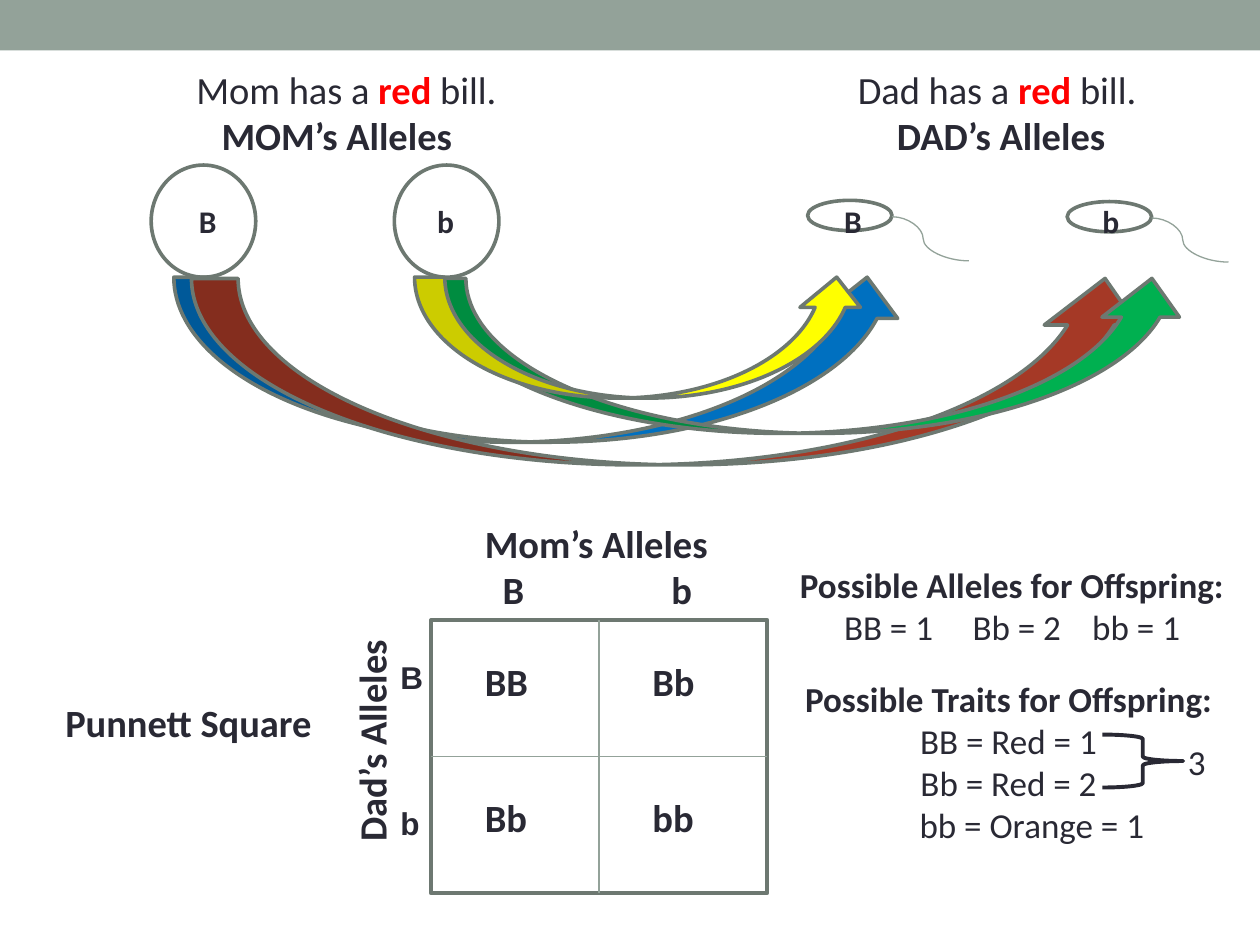
from pptx import Presentation, util as u
from pptx.dml.color import RGBColor
from pptx.enum import shapes, text
from pptx.oxml.ns import qn
from lxml import etree

INK = RGBColor(0x29, 0x29, 0x34)
RED = RGBColor(0xFF, 0x00, 0x00)
SAGE = RGBColor(0x93, 0xA2, 0x99)
OUTLINE = RGBColor(0x6D, 0x78, 0x71)
BLUE = RGBColor(0x00, 0x70, 0xC0)
RUST = RGBColor(0xA5, 0x39, 0x26)
GREEN = RGBColor(0x00, 0xB0, 0x50)
YELLOW = RGBColor(0xFF, 0xFF, 0x00)
KIND = shapes.MSO_SHAPE


def add_figure(parent, kind, place, fill=None, line=OUTLINE, weight=2.08):
    """Add a preset shape; without a fill it is see-through, without a line bare."""
    figure = parent.add_shape(kind, *map(u.Inches, place))
    figure.shadow.inherit = False
    if fill is None:
        figure.fill.background()
    else:
        figure.fill.solid()
        figure.fill.fore_color.rgb = fill
    if line is None:
        figure.line.fill.background()
    else:
        figure.line.color.rgb = line
        figure.line.width = u.Pt(weight)
    return figure


def add_line(parent, kind, start=(0, 0), end=(0, 0)):
    """Add a thin connector without a shadow."""
    line = parent.add_connector(kind, *map(u.Inches, (*start, *end)))
    line.line.color.rgb = SAGE
    line.line.width = u.Pt(0.75)
    etree.SubElement(line._element.spPr, qn("a:effectLst"))
    return line


def add_tail(parent, left, top):
    """Add the curved tail of a sperm cell."""
    tail = add_line(parent, shapes.MSO_CONNECTOR.CURVE, (left, top), (left + 0.61, top + 0.35))
    guides = tail._element.spPr.find(qn("a:prstGeom")).get_or_add_avLst()
    etree.SubElement(guides, qn("a:gd"), name="adj1", fmla="val 40500")


def set_tabs(para, stops):
    """Give a paragraph left tab stops, in inches from the text edge."""
    tabs = etree.SubElement(para._p.get_or_add_pPr(), qn("a:tabLst"))
    for stop in stops:
        etree.SubElement(tabs, qn("a:tab"), pos=str(u.Inches(stop)), algn="l")


def add_text(parent, place, lines, size=22, font="Calibri", bold=True,
             align=None, middle=False, rotation=0):
    """Add a text box from lines, each a string or a (spans, options) pair."""
    box = parent.add_textbox(*map(u.Inches, place))
    box.rotation = rotation
    frame = box.text_frame
    frame.word_wrap = True
    frame.vertical_anchor = text.MSO_ANCHOR.MIDDLE if middle else text.MSO_ANCHOR.TOP
    for index, line in enumerate(lines):
        spans, options = (line, {}) if isinstance(line, str) else line
        para = frame.paragraphs[0] if index == 0 else frame.add_paragraph()
        para.alignment = align
        if "indent" in options:
            para._p.get_or_add_pPr().set("marL", str(u.Inches(options["indent"])))
        if "tabs" in options:
            set_tabs(para, options["tabs"])
        for part in [spans] if isinstance(spans, str) else spans:
            words, color = (part, INK) if isinstance(part, str) else part
            span = para.add_run()
            span.text = words
            span.font.name = font
            span.font.size = u.Pt(size)
            span.font.bold = options.get("bold", bold) or color == RED
            span.font.color.rgb = color
    return box


def add_parents(parent):
    """Draw both parents' cells, their labels and the inheritance arrows."""
    for left in (1.2, 3.13):
        add_figure(parent, KIND.OVAL, (left, 1.31, 0.83, 0.89))
    for left, top in ((8.47, 1.6), (6.41, 1.59)):
        add_figure(parent, KIND.OVAL, (left, top, 0.67, 0.24))
        add_tail(parent, left + 0.67, top + 0.13)
    bills = ["\tMom has a ", ("red", RED), " bill.\tDad has a ", ("red", RED), " bill."]
    add_text(parent, (0.33, 0.47, 9.25, 0.84), [
        (bills, {"tabs": (1.13, 6.38), "bold": False}),
        ("\tMOM’s Alleles\tDAD’s Alleles", {"tabs": (1.33, 6.69)}),
    ], middle=True)
    add_text(parent, (1.2, 1.55, 7.98, 0.4),
             [("\tB\tb\tB\tb", {"tabs": (0.28, 2.17, 5.4, 7.45)})], size=18, middle=True)
    for place, fill in (
        ((1.38, 2.2, 5.83, 1.31), BLUE),
        ((1.52, 2.21, 7.62, 1.48), RUST),
        ((3.39, 2.21, 6.06, 1.23), GREEN),
        ((3.29, 2.2, 3.59, 0.96), YELLOW),
    ):
        add_figure(parent, KIND.CURVED_UP_ARROW, place, fill)


def add_punnett_square(parent):
    """Draw the two-by-two square with its headings and genotypes."""
    group = parent.add_group_shape().shapes
    square = add_figure(group, KIND.RECTANGLE, (3.42, 4.92, 2.67, 2.17))
    for first, last in ((0, 2), (1, 3)):
        line = add_line(group, shapes.MSO_CONNECTOR.STRAIGHT)
        line.begin_connect(square, first)
        line.end_connect(square, last)
    add_text(parent, (3.75, 4.08, 2.33, 0.84),
             ["Mom’s Alleles", ("\tB\tb", {"tabs": (0.14, 1.48)})])
    add_text(parent, (1.98, 5.57, 1.94, 0.47), ["Dad’s Alleles"], rotation=270)
    for label, top in (("B", 5.17), ("b", 6.33)):
        add_text(parent, (3.08, top, 0.46, 0.4), [label], size=18, font="Arial")
    for row, genotypes in enumerate((("BB", "Bb"), ("Bb", "bb"))):
        for column, genotype in enumerate(genotypes):
            place = (3.75 + 1.33 * column, 5.17 + 1.08 * row, 0.78, 0.47)
            add_text(parent, place, [genotype])
    add_text(parent, (0.42, 5.5, 2.17, 0.47), ["Punnett Square"])


def add_results(parent):
    """List the possible alleles and traits of the offspring."""
    add_text(parent, (6.25, 4.42, 3.75, 0.77), [
        "Possible Alleles for Offspring:",
        ("\tBB = 1\tBb = 2\tbb = 1", {"tabs": (0.35, 1.37, 2.32), "bold": False}),
    ], size=20)
    add_text(parent, (6.17, 5.33, 3.67, 1.75), [
        ("Possible Traits for Offspring:", {"bold": True}),
        "BB = Red = 1",
        "Bb = Red = 2",
        ("bb = Orange = 1", {"indent": 0.37}),
    ], size=20, bold=False, align=text.PP_ALIGN.CENTER)
    add_figure(parent, KIND.RIGHT_BRACE, (8.75, 5.83, 0.64, 0.42), line=INK, weight=2.25)
    add_text(parent, (9.33, 5.83, 0.33, 0.44), ["3"], size=20, bold=False)


def main():
    """Build and save the slide."""
    deck = Presentation()
    deck.slide_width, deck.slide_height = u.Inches(10), u.Inches(7.5)
    page = deck.slides.add_slide(deck.slide_layouts[6]).shapes
    add_figure(page, KIND.RECTANGLE, (0, 0, 10, 0.4), SAGE, line=None)
    add_parents(page)
    add_punnett_square(page)
    add_results(page)
    deck.save("out.pptx")


if __name__ == "__main__":
    main()
